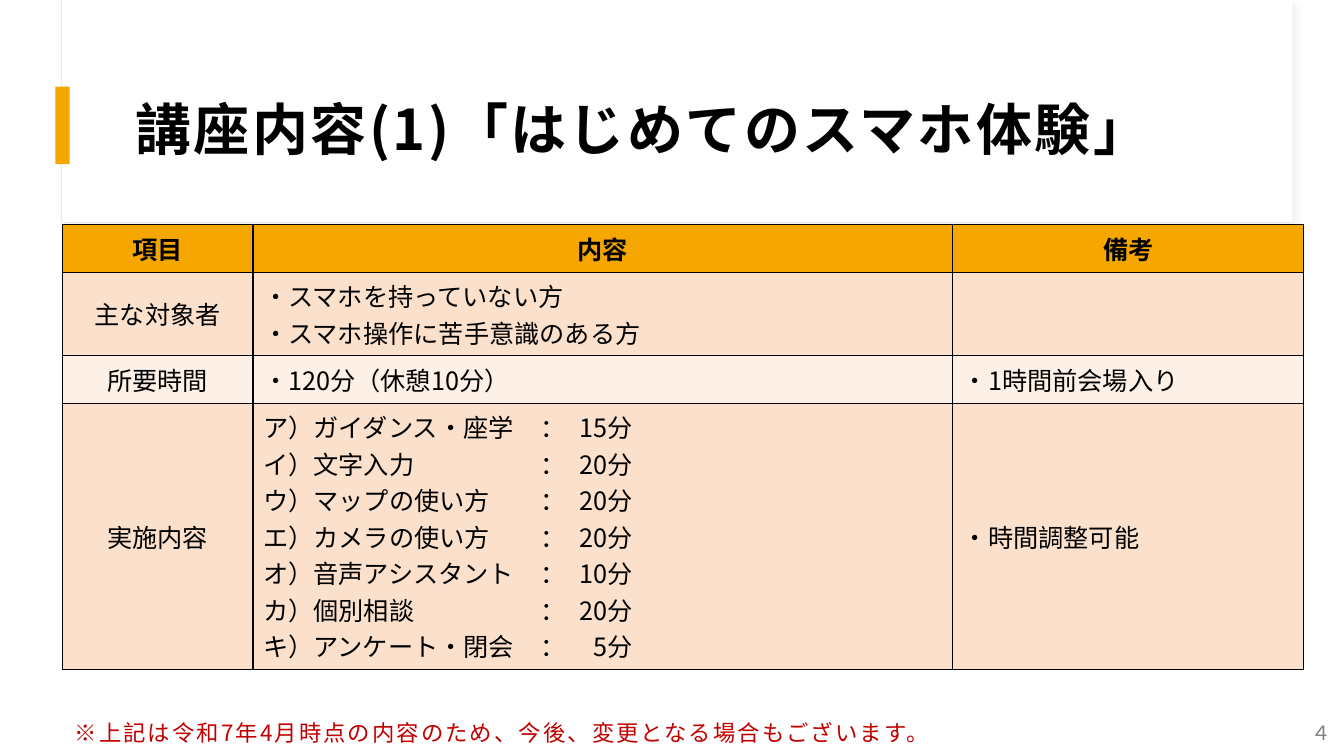
from lxml import etree
from pptx import Presentation
from pptx.dml.color import RGBColor
from pptx.enum.shapes import MSO_SHAPE as Preset
from pptx.enum.text import MSO_ANCHOR as Anchor, PP_ALIGN as Align
from pptx.oxml import parse_xml
from pptx.oxml.ns import nsdecls, qn
from pptx.util import Inches, Pt

FONT = "Noto Sans CJK JP"
ORANGE, PEACH, CREAM = "F5A700", "FBE1CC", "FDF1E7"
HEADINGS = ["項目", "内容", "備考"]
LESSONS = [("ア）ガイダンス・座学", 15), ("イ）文字入力", 20), ("ウ）マップの使い方", 20),
           ("エ）カメラの使い方", 20), ("オ）音声アシスタント", 10), ("カ）個別相談", 20),
           ("キ）アンケート・閉会", 5)]
ROWS = [
    (0.47, ORANGE, [[heading] for heading in HEADINGS]),
    (0.83, PEACH, [["主な対象者"], ["・スマホを持っていない方", "・スマホ操作に苦手意識のある方"], []]),
    (0.47, CREAM, [["所要時間"], ["・120分（休憩10分）"], ["・1時間前会場入り"]]),
    (2.64, PEACH, [["実施内容"], [f"{name}\t：\t{minutes}分" for name, minutes in LESSONS],
                   ["・時間調整可能"]]),
]
COLUMN_WIDTHS = [1.89, 6.94, 3.48]
# Tab stops line up the colons and the minutes
TAB_STOPS = [(2.75, "l"), (3.67, "r")]


def color(code):
    return RGBColor.from_string(code)


def set_values(target, values):
    for name, value in values.items():
        setattr(target, name, value)


def write(para, text, size, code, bold=False, spacing=0):
    span = para.add_run()
    span.text = text
    set_values(span.font, {"name": FONT, "size": Pt(size), "bold": bold})
    span.font.color.rgb = color(code)
    properties = span.font._element
    if spacing:
        properties.set("spc", str(int(spacing * 100)))
    etree.SubElement(properties, qn("a:ea")).set("typeface", FONT)


def add_text(page, box, text, size, code, margins, anchor, align=Align.LEFT,
             bold=False, spacing=0, line_spacing=None):
    frame = page.shapes.add_textbox(*map(Inches, box)).text_frame
    sides = ("margin_left", "margin_top", "margin_right", "margin_bottom")
    set_values(frame, {"word_wrap": True, "vertical_anchor": anchor,
                       **dict(zip(sides, map(Inches, margins)))})
    para = frame.paragraphs[0]
    set_values(para, {"alignment": align, "line_spacing": line_spacing})
    write(para, text, size, code, bold, spacing)


def add_block(page, box, fill, line=None):
    block = page.shapes.add_shape(Preset.RECTANGLE, *map(Inches, box))
    block.shadow.inherit = False
    block.fill.solid()
    block.fill.fore_color.rgb = color(fill)
    if line:
        block.line.color.rgb = color(line)
        block.line.width = Pt(0.75)
    else:
        block.line.fill.background()
    return block


def add_header(page, box):
    left, top, width, height = box
    # Panel with a soft shadow, and the white sheet above it
    panel = add_block(page, (left - 0.01, top, width + 0.01, height + 0.01), "FFFFFF", "E9E9E9")
    effects = panel._element.spPr.find(qn("a:effectLst"))
    effects.append(parse_xml(
        f'<a:outerShdw {nsdecls("a")} blurRad="{Pt(4)}" dist="{Pt(3)}" dir="2700000">'
        '<a:srgbClr val="D9D9D9"><a:alpha val="30000"/></a:srgbClr></a:outerShdw>'))
    add_block(page, box, "FFFFFF")
    # Accent bar and title
    add_block(page, (left - 0.07, top + 0.86, 0.14, 0.77), ORANGE)
    add_text(page, (left + 0.6, top + 0.6, 11.12, 1.29), "講座内容(1)「はじめてのスマホ体験」",
             40, "000000", (0.12, 0.12, 0.12, 0.1), Anchor.MIDDLE,
             bold=True, spacing=1.8, line_spacing=1.05)


def add_borders(cell):
    properties = cell._tc.get_or_add_tcPr()
    for position, side in enumerate(("lnL", "lnR", "lnT", "lnB")):
        properties.insert(position, parse_xml(
            f'<a:{side} {nsdecls("a")} w="{Pt(1)}"><a:solidFill>'
            f'<a:srgbClr val="000000"/></a:solidFill></a:{side}>'))


def add_tab_stops(para):
    stops = etree.SubElement(para._p.get_or_add_pPr(), qn("a:tabLst"))
    for position, align in TAB_STOPS:
        stop = etree.SubElement(stops, qn("a:tab"))
        stop.set("pos", str(Inches(position)))
        stop.set("algn", align)


def fill_cell(cell, lines, fill, centered, bold):
    cell.fill.solid()
    cell.fill.fore_color.rgb = color(fill)
    cell.vertical_anchor = Anchor.MIDDLE
    add_borders(cell)
    for index, line in enumerate(lines):
        frame = cell.text_frame
        para = frame.add_paragraph() if index else frame.paragraphs[0]
        para.alignment = Align.CENTER if centered else Align.LEFT
        if "\t" in line:
            add_tab_stops(para)
        write(para, line, 18, "000000", bold)


def add_course_table(page, box):
    table = page.shapes.add_table(len(ROWS), len(COLUMN_WIDTHS), *map(Inches, box)).table
    for column, width in zip(table.columns, COLUMN_WIDTHS):
        column.width = Inches(width)
    for row_index, (height, fill, cells) in enumerate(ROWS):
        table.rows[row_index].height = Inches(height)
        is_header = row_index == 0
        for column_index, lines in enumerate(cells):
            fill_cell(table.cell(row_index, column_index), lines, fill,
                      is_header or column_index == 0, is_header)


def add_footer(page, box):
    left, top, width, height = box
    add_text(page, box, "※上記は令和7年4月時点の内容のため、今後、変更となる場合もございます。",
             16, "C00000", (0.12, 0.12, 0.12, 0.1), Anchor.BOTTOM, spacing=1.5)
    # Page number
    add_text(page, (left + width - 1.03, top + 0.46, 1.3, 0.28), "４", 14, "808080",
             (0, 0, 0, 0), Anchor.MIDDLE, Align.RIGHT)


def main():
    deck = Presentation()
    set_values(deck, {"slide_width": Inches(13.33), "slide_height": Inches(7.5)})
    page = deck.slides.add_slide(deck.slide_layouts[6])
    add_header(page, (0.62, 0, 12.2, 2.2))
    add_course_table(page, (0.62, 2.23, sum(COLUMN_WIDTHS), sum(row[0] for row in ROWS)))
    add_footer(page, (0.62, 6.67, 12.31, 0.83))
    deck.save("out.pptx")


if __name__ == "__main__":
    main()
